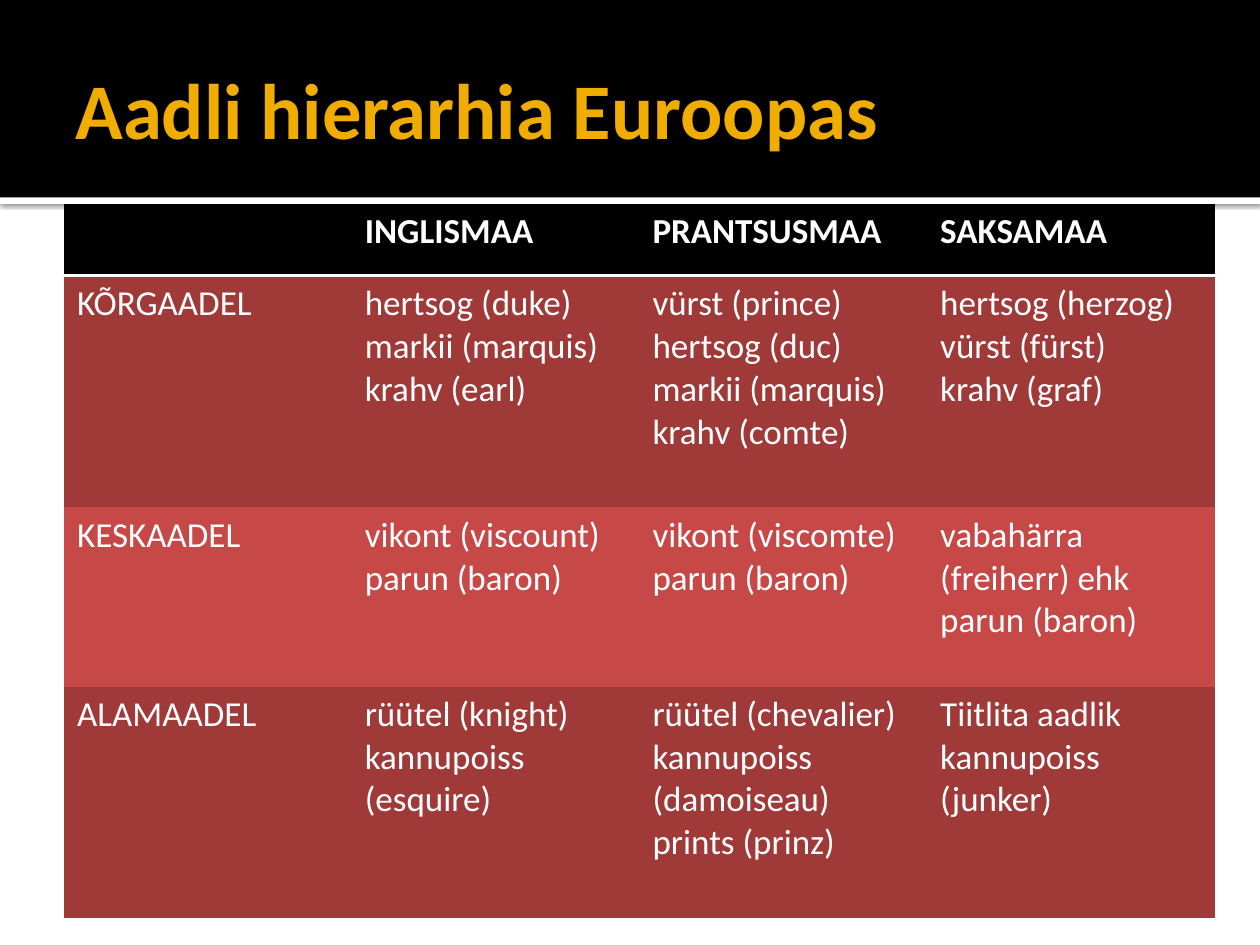
"""Build a slide with a table of the ranks of nobility in Europe."""
from lxml import etree
from pptx import Presentation
from pptx.dml.color import RGBColor
from pptx.enum.shapes import MSO_SHAPE
from pptx.enum.text import MSO_ANCHOR, MSO_AUTO_SIZE, PP_ALIGN
from pptx.util import Cm, Pt

RECT = MSO_SHAPE.RECTANGLE
MIDDLE = MSO_ANCHOR.MIDDLE
NO_FIT = MSO_AUTO_SIZE.NONE
LEFT = PP_ALIGN.LEFT
FONT = "Calibri"
NS = 'xmlns:a="http://schemas.openxmlformats.org/drawingml/2006/main"'
PLAIN = "{2D5ABB26-0587-4C30-8999-92F81FD0307C}"
HEX = {"black": "000000", "white": "FFFFFF", "gold": "F0AD00",
       "dark": "9F3A39", "light": "C64847"}
SHADOW = f"""<a:effectLst {NS}>
<a:outerShdw blurRad="31750" dist="10160" dir="5400000" algn="tl" rotWithShape="0">
<a:srgbClr val="{HEX['black']}"><a:alpha val="60000"/></a:srgbClr>
</a:outerShdw></a:effectLst>"""
RULE = f"""<a:lnB {NS} w="25400"><a:solidFill>
<a:srgbClr val="{HEX['white']}"/></a:solidFill></a:lnB>"""
ROWS = [
    (1.45, "black", ["", "INGLISMAA", "PRANTSUSMAA", "SAKSAMAA"]),
    (4.67, "dark", ["KÕRGAADEL",
                    "hertsog (duke)\nmarkii (marquis)\nkrahv (earl)",
                    "vürst (prince)\nhertsog (duc)\nmarkii (marquis)\nkrahv (comte)",
                    "hertsog (herzog)\nvürst (fürst)\nkrahv (graf)"]),
    (3.61, "light", ["KESKAADEL",
                     "vikont (viscount)\nparun (baron)",
                     "vikont (viscomte)\nparun (baron)",
                     "vabahärra (freiherr) ehk parun (baron)"]),
    (4.67, "dark", ["ALAMAADEL",
                    "rüütel (knight)\nkannupoiss (esquire)",
                    "rüütel (chevalier)\nkannupoiss (damoiseau)\nprints (prinz)",
                    "Tiitlita aadlik kannupoiss (junker)"]),
]


def style(para, size, color, bold):
    para.font.name = FONT
    para.font.size = Pt(size)
    para.font.bold = bold
    para.font.color.rgb = RGBColor.from_string(HEX[color])


def paint(item, color):
    item.fill.solid()
    item.fill.fore_color.rgb = RGBColor.from_string(HEX[color])


deck = Presentation()
deck.slide_width, deck.slide_height = Cm(25.4), Cm(19.05)
slide = deck.slides.add_slide(deck.slide_layouts[5])

title = slide.shapes.title
title.left, title.top, title.width, title.height = Cm(1.27), Cm(0.43), Cm(22.86), Cm(3.48)
frame = title.text_frame
frame.text = "Aadli hierarhia Euroopas"
frame.auto_size = NO_FIT
frame.vertical_anchor = MIDDLE
frame.margin_left = Cm(0.25)
frame.margin_right = frame.margin_top = frame.margin_bottom = Cm(0.13)
frame.paragraphs[0].alignment = LEFT
style(frame.paragraphs[0], 45, "gold", True)

for top, height, color in [(3.98, 0.13, "white"), (0, 3.98, "black")]:
    bar = slide.shapes.add_shape(RECT, 0, Cm(top), deck.slide_width, Cm(height))
    paint(bar, color)
    bar.line.fill.background()
    bar.shadow.inherit = False
    if color == "white":
        effect = bar.element.spPr.find("{*}effectLst")
        bar.element.spPr.replace(effect, etree.fromstring(SHADOW))
    title.element.addprevious(bar.element)

total = sum(height for height, color, texts in ROWS)
holder = slide.shapes.add_table(len(ROWS), 4, Cm(1.3), Cm(4.11), Cm(23.2), Cm(total))
table = holder.table
next(holder.element.iter("{*}tableStyleId")).text = PLAIN
for r, (height, color, texts) in enumerate(ROWS):
    table.rows[r].height = Cm(height)
    for c, text in enumerate(texts):
        cell = table.cell(r, c)
        cell.text = text
        paint(cell, color)
        for para in cell.text_frame.paragraphs:
            style(para, 20, "white", r == 0)

head = next(holder.element.iter("{*}tr"))
for props in head.iter("{*}tcPr"):
    props.insert(0, etree.fromstring(RULE))

deck.save("out.pptx")
